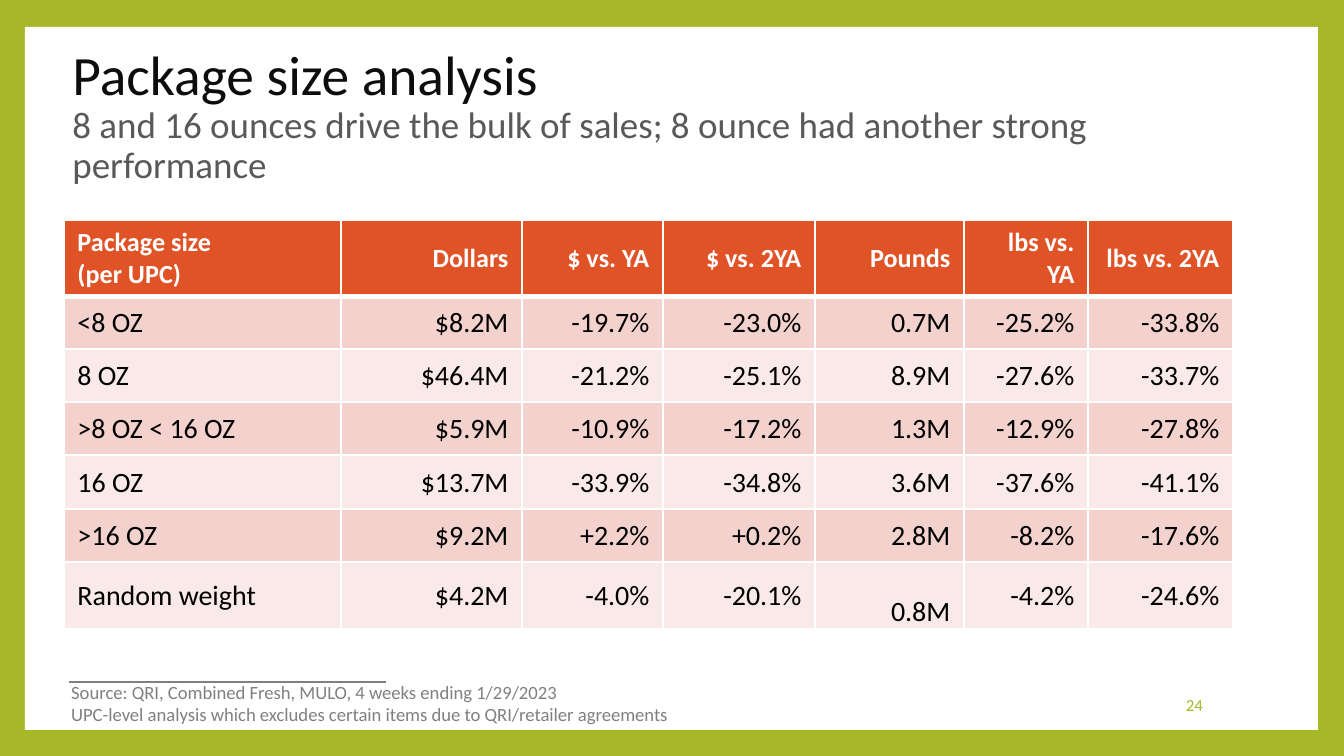
import pptx
import pptx.dml.color
import pptx.enum.shapes
import pptx.enum.text
import pptx.oxml
import pptx.oxml.ns
import pptx.util

PX = 914400 / 134.4
FONT = "Calibri"
COLORS = {
    "frame": "A6B727",
    "panel": "FFFFFF",
    "title": "0D0D0D",
    "subtitle": "595959",
    "source": "808080",
    "header": "DF5327",
    "band_dark": "F3D1CD",
    "band_light": "F9E9E8",
    "body": "000000",
}
COLUMN_WIDTHS = [277, 181, 141, 152, 149, 124, 145]
ROW_HEIGHTS = [76, 53, 53, 53, 54, 53, 67]
ROWS = [
    ["Package size\v(per UPC)", "Dollars", "$ vs. YA", "$ vs. 2YA", "Pounds", "lbs vs. YA", "lbs vs. 2YA"],
    ["<8 OZ", "$8.2M", "-19.7%", "-23.0%", "0.7M", "-25.2%", "-33.8%"],
    ["8 OZ", "$46.4M", "-21.2%", "-25.1%", "8.9M", "-27.6%", "-33.7%"],
    [">8 OZ < 16 OZ", "$5.9M", "-10.9%", "-17.2%", "1.3M", "-12.9%", "-27.8%"],
    ["16 OZ", "$13.7M", "-33.9%", "-34.8%", "3.6M", "-37.6%", "-41.1%"],
    [">16 OZ", "$9.2M", "+2.2%", "+0.2%", "2.8M", "-8.2%", "-17.6%"],
    ["Random weight", "$4.2M", "-4.0%", "-20.1%", "0.8M", "-4.2%", "-24.6%"],
]
SOURCE_LINES = [
    "Source: QRI, Combined Fresh, MULO, 4 weeks ending 1/29/2023",
    "UPC-level analysis which excludes certain items due to QRI/retailer agreements",
]
ALIGN = pptx.enum.text.PP_ALIGN
ANCHOR = pptx.enum.text.MSO_ANCHOR


def px(length):
    """Convert pixels to EMU."""
    return pptx.util.Emu(round(length * PX))


def color(name):
    """Look up a palette colour."""
    return pptx.dml.color.RGBColor.from_string(COLORS[name])


def add_text(paragraph, text, size, color_name, bold=False):
    """Add formatted runs, with a line break at each vertical tab."""
    for index, line in enumerate(text.split("\v")):
        if index:
            paragraph.add_line_break()
        run = paragraph.add_run()
        run.text = line
        run.font.name = FONT
        run.font.size = pptx.util.Pt(size)
        run.font.bold = bold
        run.font.color.rgb = color(color_name)


def add_panel(slide, left, top, width, height):
    """Fill the background and lay the white panel behind everything."""
    slide.background.fill.solid()
    slide.background.fill.fore_color.rgb = color("frame")
    panel = slide.shapes.add_shape(
        pptx.enum.shapes.MSO_SHAPE.RECTANGLE, px(left), px(top), px(width), px(height))
    panel.shadow.inherit = False
    panel.fill.solid()
    panel.fill.fore_color.rgb = color("panel")
    panel.line.fill.background()
    slide.shapes._spTree.insert(2, panel._element)


def add_title(slide, left, top, width, height):
    """Place the title and its subtitle in the title placeholder."""
    title = slide.shapes.title
    title.left, title.top, title.width, title.height = map(px, (left, top, width, height))
    frame = title.text_frame
    frame.auto_size = pptx.enum.text.MSO_AUTO_SIZE.NONE
    frame.word_wrap = True
    frame.vertical_anchor = ANCHOR.MIDDLE
    paragraph = frame.paragraphs[0]
    paragraph.alignment = ALIGN.LEFT
    paragraph.line_spacing = 0.9
    add_text(paragraph, "Package size analysis", 29.7, "title")
    paragraph.add_line_break()
    add_text(
        paragraph,
        "8 and 16 ounces drive the bulk of sales; 8 ounce had another strong performance",
        19.8, "subtitle")


def set_borders(cell, top, bottom):
    """Give a cell white borders, with top and bottom widths in points."""
    properties = cell._tc.get_or_add_tcPr()
    for index, (side, width) in enumerate([("L", 1), ("R", 1), ("T", top), ("B", bottom)]):
        properties.insert(index, pptx.oxml.parse_xml(
            f'<a:ln{side} {pptx.oxml.ns.nsdecls("a")} w="{pptx.util.Pt(width)}">'
            f'<a:solidFill><a:srgbClr val="{COLORS["panel"]}"/></a:solidFill></a:ln{side}>'))


def add_package_table(slide, left, top):
    """Add the package size table with its header and banded rows."""
    table = slide.shapes.add_table(
        len(ROWS), len(COLUMN_WIDTHS), px(left), px(top),
        px(sum(COLUMN_WIDTHS)), px(sum(ROW_HEIGHTS))).table
    for column, width in zip(table.columns, COLUMN_WIDTHS):
        column.width = px(width)
    for row_index, values in enumerate(ROWS):
        table.rows[row_index].height = px(ROW_HEIGHTS[row_index])
        is_header = row_index == 0
        band = "header" if is_header else "band_dark" if row_index % 2 else "band_light"
        for column_index, value in enumerate(values):
            cell = table.cell(row_index, column_index)
            cell.fill.solid()
            cell.fill.fore_color.rgb = color(band)
            set_borders(cell, 3 if row_index == 1 else 1, 3 if is_header else 1)
            cell.vertical_anchor = ANCHOR.MIDDLE
            if not is_header:
                cell.margin_top, cell.margin_bottom = px(1), 0
            paragraph = cell.text_frame.paragraphs[0]
            paragraph.alignment = ALIGN.RIGHT if column_index else ALIGN.LEFT
            add_text(paragraph, value, 14 if is_header else 15,
                     "panel" if is_header else "body", is_header)
    table.cell(len(ROWS) - 1, 4).vertical_anchor = ANCHOR.BOTTOM


def add_footer(slide, left, top, width, height):
    """Add the rule, the source note and the page number."""
    rule = slide.shapes.add_connector(
        pptx.enum.shapes.MSO_CONNECTOR.STRAIGHT,
        px(left + 11), px(top + 8), px(left + 328), px(top + 8))
    rule.line.color.rgb = color("source")
    rule.line.width = pptx.util.Pt(0.79)
    rule._element.spPr.append(
        pptx.oxml.parse_xml(f'<a:effectLst {pptx.oxml.ns.nsdecls("a")}/>'))

    source = slide.shapes.add_textbox(px(left), px(top), px(633), px(height)).text_frame
    source.word_wrap = False
    for index, line in enumerate(SOURCE_LINES):
        paragraph = source.add_paragraph() if index else source.paragraphs[0]
        add_text(paragraph, line, 10, "source")

    number = slide.shapes.add_textbox(
        px(left + width - 188), px(top + 11), px(188), px(40)).text_frame
    number.word_wrap = True
    number.vertical_anchor = ANCHOR.MIDDLE
    number.paragraphs[0].alignment = ALIGN.RIGHT
    add_text(number.paragraphs[0], "24", 9, "frame")


def main():
    """Build and save the package size slide."""
    presentation = pptx.Presentation()
    presentation.slide_width, presentation.slide_height = px(1344), px(756)
    slide = presentation.slides.add_slide(presentation.slide_layouts[5])
    add_panel(slide, 25, 27, 1293, 703)
    add_title(slide, 59, 46, 1146, 142)
    add_footer(slide, 58, 674, 1158, 59)
    add_package_table(slide, 64, 220)
    presentation.save("out.pptx")


if __name__ == "__main__":
    main()
